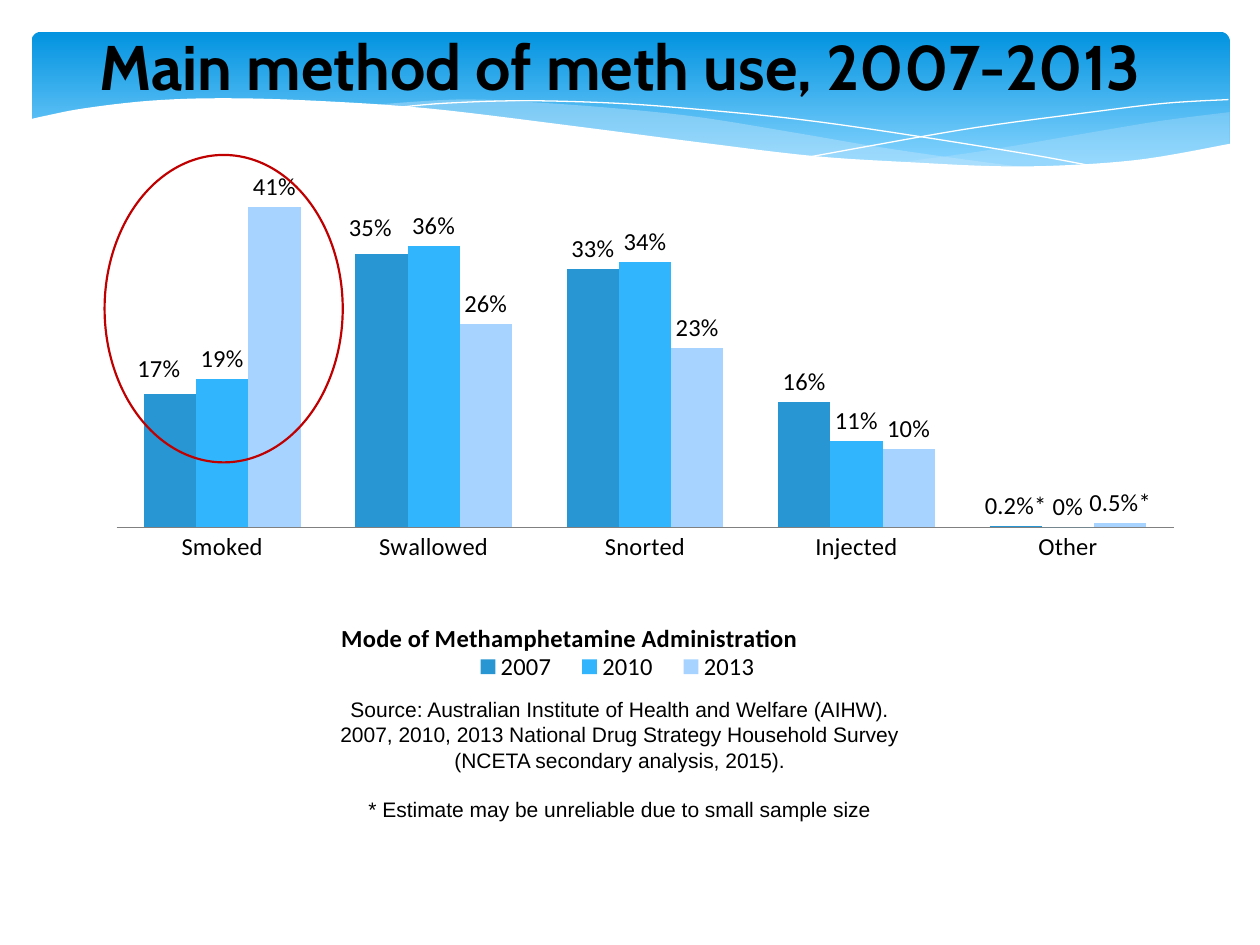
import dataclasses

import lxml.etree
import pptx
import pptx.chart.data
import pptx.dml.color
import pptx.enum.chart
import pptx.enum.shapes
import pptx.enum.text
import pptx.oxml
import pptx.oxml.ns
import pptx.util
from pptx.util import Inches

qn = pptx.oxml.ns.qn


@dataclasses.dataclass(frozen=True)
class Theme:
    black: str = "000000"
    white: str = "FFFFFF"
    red: str = "C00000"
    axis: str = "808080"
    wave: str = "C6E7FC"
    banner: tuple = ("0293E0", "83D3FE")
    series: tuple = ("2896D2", "31B6FD", "A6D3FF")
    title_font: str = "Cabin"
    chart_font: str = "Calibri"
    note_font: str = "Arial"
    title_size: int = 36
    chart_size: int = 14
    note_size: int = 12


THEME = Theme()

# Wave outlines: (x, y) knots in inches
RIGHT_WAVE_TOP = [(9.76, 0.89), (9.21, 0.96), (8.61, 1.06), (7.79, 1.2), (7.06, 1.3), (6.61, 1.36)]
RIGHT_WAVE_BOTTOM = [(6.61, 1.36), (7.18, 1.41), (8.03, 1.45), (8.72, 1.42), (9.28, 1.35), (9.76, 1.23)]
MID_WAVE_TOP = [(8.93, 1.41), (8.07, 1.32), (7.06, 1.18), (6.29, 1.05), (5.55, 0.93), (4.89, 0.86),
                (4.2, 0.81), (3.61, 0.79), (2.86, 0.84)]
MID_WAVE_BOTTOM = [(2.86, 0.84), (3.62, 0.92), (4.49, 1.05), (5.66, 1.24), (6.5, 1.35), (7.22, 1.42),
                   (8.07, 1.45), (8.93, 1.41)]
LONG_LINE = [(3.09, 0.86), (3.53, 0.82), (4.16, 0.8), (4.89, 0.82), (5.56, 0.87), (6.36, 0.95),
             (7.27, 1.08), (8.31, 1.25), (9.07, 1.4)]
RISING_LINE = [(6.13, 1.3), (6.95, 1.15), (7.76, 1.01), (8.66, 0.89), (9.24, 0.82), (9.75, 0.79)]
WHITE_WAVE = [(9.77, 1.14), (9.1, 1.26), (8.5, 1.31), (7.93, 1.32), (7.26, 1.29), (6.47, 1.24),
              (5.55, 1.13), (4.47, 0.99), (3.39, 0.86), (2.5, 0.8), (1.77, 0.78), (1.19, 0.8),
              (0.67, 0.86), (0.36, 0.92), (0.23, 0.95)]


def rgb(color):
    return pptx.dml.color.RGBColor.from_string(color)


def style_font(font, name, size, bold=False):
    font.name, font.size, font.bold = name, pptx.util.Pt(size), bold
    font.color.rgb = rgb(THEME.black)


def smooth(knots, steps=6):
    """Points of a Catmull-Rom curve through the knots."""
    padded = [knots[0], *knots, knots[-1]]
    points = [knots[0]]
    for a, b, c, d in zip(padded, padded[1:], padded[2:], padded[3:]):
        for i in range(1, steps + 1):
            t = i / steps
            points.append(tuple(
                0.5 * (2 * q + (r - p) * t + (2 * p - 5 * q + 4 * r - s) * t**2
                       + (3 * q - p - 3 * r + s) * t**3)
                for p, q, r, s in zip(a, b, c, d)))
    return points


def add_outline(slide, points, fill=None, opacity=100):
    """Filled closed area, or a white hairline when no fill is given."""
    points = [(Inches(x), Inches(y)) for x, y in points]
    builder = slide.shapes.build_freeform(*points[0], scale=1.0)
    builder.add_line_segments(points[1:], close=fill is not None)
    sp = builder.convert_to_shape()
    sp.shadow.inherit = False
    if fill is None:
        sp.fill.background()
        sp.line.color.rgb = rgb(THEME.white)
        sp.line.width = pptx.util.Pt(0)
        return
    sp.line.fill.background()
    sp.fill.solid()
    sp.fill.fore_color.rgb = rgb(fill)
    if opacity < 100:
        color = sp.fill._xPr.find(".//" + qn("a:srgbClr"))
        lxml.etree.SubElement(color, qn("a:alpha")).set("val", str(opacity * 1000))


def add_banner(slide):
    sp = slide.shapes.add_shape(pptx.enum.shapes.MSO_SHAPE.ROUNDED_RECTANGLE,
                                Inches(0.25), Inches(0.25), Inches(9.51), Inches(1.15))
    sp.adjustments[0] = 0.071
    sp.shadow.inherit = False
    sp.line.fill.background()
    sp.fill.gradient()
    sp.fill.gradient_angle = 270
    for stop, color, position in zip(sp.fill.gradient_stops, THEME.banner, (0, 0.9)):
        stop.color.rgb = rgb(color)
        stop.position = position

    add_outline(slide, smooth(RIGHT_WAVE_TOP) + smooth(RIGHT_WAVE_BOTTOM), THEME.wave, 29)
    add_outline(slide, smooth(MID_WAVE_TOP) + smooth(MID_WAVE_BOTTOM), THEME.wave, 40)
    add_outline(slide, smooth(LONG_LINE))
    add_outline(slide, smooth(RISING_LINE))
    add_outline(slide, smooth(WHITE_WAVE) + [(0.23, 1.62), (9.77, 1.62)], THEME.white)


def add_text(slide, box, paragraphs, font, size, bold=False, anchor="TOP", gap=0):
    sp = slide.shapes.add_textbox(*map(Inches, box))
    tf = sp.text_frame
    tf.word_wrap = True
    tf.vertical_anchor = pptx.enum.text.MSO_ANCHOR[anchor]
    for i, text in enumerate(paragraphs):
        p = tf.add_paragraph() if i else tf.paragraphs[0]
        p.text = text
        p.alignment = pptx.enum.text.PP_ALIGN.CENTER
        if i:
            p.space_before = pptx.util.Pt(gap)
        for r in p.runs:
            style_font(r.font, font, size, bold)
    return sp


def layout_xml(inner=False, edge=True, **values):
    """Manual chart layout, in fractions of the chart."""
    layout = pptx.oxml.parse_xml(
        '<c:layout xmlns:c="http://schemas.openxmlformats.org/drawingml/2006/chart"><c:manualLayout/></c:layout>')
    parts = [("layoutTarget", "inner")] if inner else []
    parts += [("xMode", "edge"), ("yMode", "edge")] if edge else []
    for tag, value in parts + list(values.items()):
        lxml.etree.SubElement(layout[0], qn("c:" + tag)).set("val", str(value))
    return layout


def set_layout(element, after, **options):
    """Put a manual layout behind the named child, or first."""
    for old in element.findall(qn("c:layout")):
        element.remove(old)
    child = element.find(qn(after)) if after else None
    element.insert(0 if child is None else element.index(child) + 1, layout_xml(**options))


def add_method_chart(slide):
    data = pptx.chart.data.CategoryChartData(number_format="0%")
    data.categories = ["Smoked", "Swallowed", "Snorted", "Injected", "Other"]
    data.add_series("2007", (0.17, 0.35, 0.33, 0.16, 0.002))
    data.add_series("2010", (0.19, 0.36, 0.34, 0.11, 0))
    data.add_series("2013", (0.41, 0.26, 0.23, 0.10, 0.005))
    chart = slide.shapes.add_chart(pptx.enum.chart.XL_CHART_TYPE.COLUMN_CLUSTERED, Inches(0.75),
                                   Inches(1.31), Inches(8.74), Inches(4.17), data).chart
    style_font(chart.font, THEME.chart_font, THEME.chart_size)
    chart.has_title = False
    plot = chart.plots[0]
    plot.gap_width, plot.overlap, plot.vary_by_categories = 105, 0, False
    set_layout(chart._chartSpace.chart.plotArea, None, inner=True, x=0.02, y=0.02, w=0.96, h=0.67)

    # Axes
    values = chart.value_axis
    values.minimum_scale, values.maximum_scale = 0, 0.45
    values.has_major_gridlines = False
    values.visible = False
    axis = chart.category_axis
    axis.major_tick_mark = pptx.enum.chart.XL_TICK_MARK.NONE
    axis.format.line.color.rgb = rgb(THEME.axis)
    tf = axis.axis_title.text_frame
    tf.text = "Mode of Methamphetamine Administration"
    style_font(tf.paragraphs[0].runs[0].font, THEME.chart_font, THEME.chart_size, True)
    set_layout(axis.axis_title._element, "c:tx", x=0.22, y=0.86)

    # Legend
    chart.has_legend = True
    chart.legend.position = pptx.enum.chart.XL_LEGEND_POSITION.BOTTOM
    chart.legend.include_in_layout = False
    set_layout(chart.legend._element, "c:legendPos", x=0.33, y=0.92, w=0.29, h=0.07)

    # Series and their labels
    above = pptx.enum.chart.XL_LABEL_POSITION.OUTSIDE_END
    for series, color in zip(plot.series, THEME.series):
        series.format.fill.solid()
        series.format.fill.fore_color.rgb = rgb(color)
        labels = series.data_labels
        labels.show_value = True
        labels.number_format, labels.number_format_is_linked = "0%", False
        labels.position = above
    for index, text in ((0, "0.2%*"), (2, "0.5%*")):
        label = plot.series[index].points[4].data_label
        label.text_frame.text = text
        style_font(label.text_frame.paragraphs[0].runs[0].font, THEME.chart_font, THEME.chart_size)
        label.position = above
    for index in (0, 1):
        label = plot.series[0].points[index].data_label
        label.position = above
        set_layout(label._dLbl, "c:idx", edge=False, x=-0.01, y=-0.01)


def add_highlight(slide):
    sp = slide.shapes.add_shape(pptx.enum.shapes.MSO_SHAPE.OVAL,
                                Inches(0.83), Inches(1.23), Inches(1.89), Inches(2.44))
    sp.shadow.inherit = False
    sp.fill.background()
    sp.line.color.rgb = rgb(THEME.red)
    sp.line.width = pptx.util.Pt(1.25)


def main():
    prs = pptx.Presentation()
    prs.slide_width, prs.slide_height = Inches(10), Inches(7.5)
    slide = prs.slides.add_slide(prs.slide_layouts[6])
    add_banner(slide)
    add_text(slide, (0.42, -0.11, 9, 1.25), ["Main method of meth use, 2007-2013"],
             THEME.title_font, THEME.title_size, bold=True, anchor="MIDDLE")
    note = add_text(slide, (2.17, 5.48, 5.5, 1.11), [
        "Source: Australian Institute of Health and Welfare (AIHW).\v"
        "2007, 2010, 2013 National Drug Strategy Household Survey\v"
        "(NCETA secondary analysis, 2015).",
        "* Estimate may be unreliable due to small sample size",
    ], THEME.note_font, THEME.note_size, gap=14)
    note.fill.solid()
    note.fill.fore_color.rgb = rgb(THEME.white)
    add_method_chart(slide)
    add_highlight(slide)
    prs.save("out.pptx")


if __name__ == "__main__":
    main()
